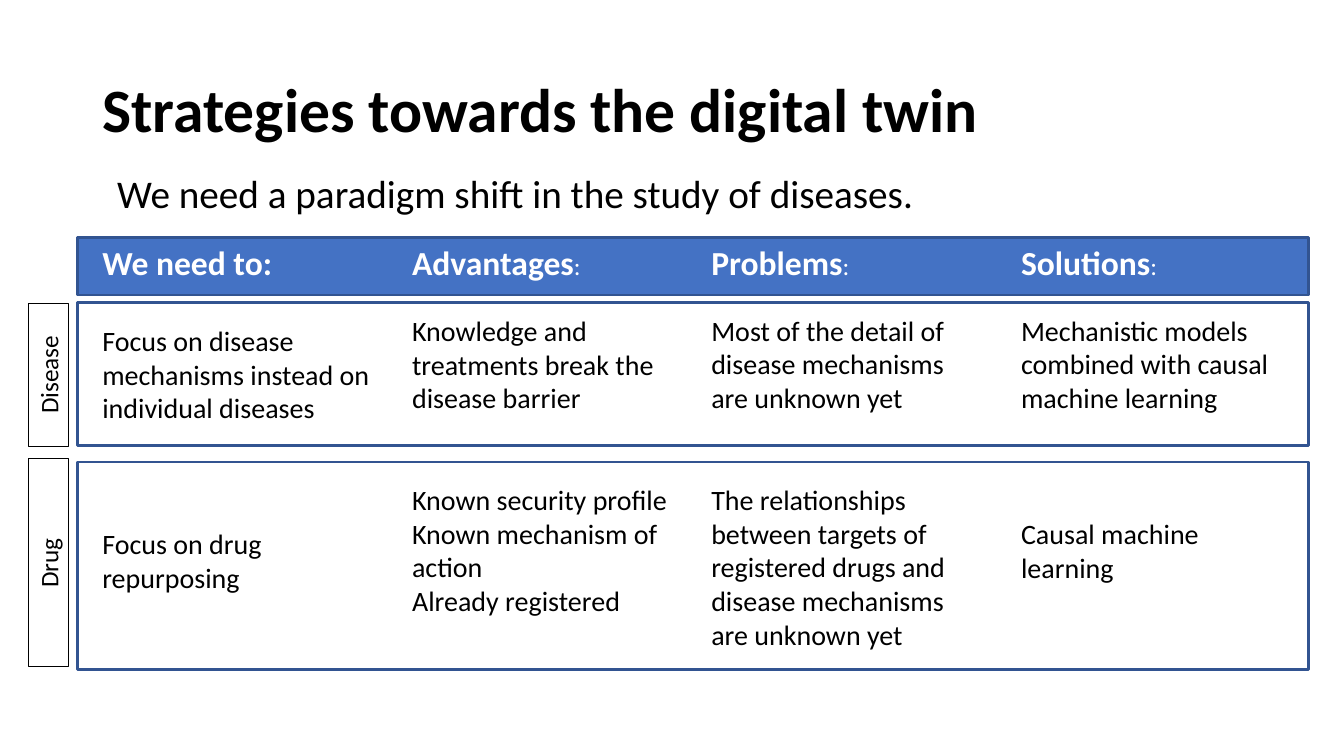
import dataclasses
import typing

import pptx
import pptx.dml.color
import pptx.enum.shapes
import pptx.enum.text
import pptx.oxml.xmlchemy
import pptx.util

RGB = pptx.dml.color.RGBColor
ALIGN = pptx.enum.text.PP_ALIGN
ANCHOR = pptx.enum.text.MSO_ANCHOR
AUTO = pptx.enum.text.MSO_AUTO_SIZE

BLUE = RGB(0x44, 0x72, 0xC4)
DARK_BLUE = RGB(0x32, 0x54, 0x91)
BLACK = RGB(0, 0, 0)
WHITE = RGB(0xFF, 0xFF, 0xFF)

FONT = "Calibri"
EMU_PER_PX = 9525
GRID_LEFT, GRID_WIDTH = 74, 1172
COLUMN_TOP = 226
TAG_CENTER, TAG_THICKNESS = 46, 38


@dataclasses.dataclass
class Row:
    tag: str
    top: int
    height: int
    tag_top: int


@dataclasses.dataclass
class Column:
    left: int
    width: int
    height: int
    heading: str
    colon: str
    colon_size: int
    disease: str
    disease_gap: float
    drug: list[str]
    drug_gap: float


ROWS = [
    Row("Disease", 288, 136, 289),
    Row("Drug", 440, 198, 437),
]

COLUMNS = [
    Column(88, 280, 400, "We need to", ":", 24,
           "Focus on disease mechanisms instead on individual diseases", 29.3,
           ["Focus on drug repurposing"], 73.2),
    Column(383, 270, 394, "Advantages", ":", 18,
           "Knowledge and treatments break the disease barrier", 22,
           ["Known security profile", "Known mechanism of action",
            "Already registered"], 48.8),
    Column(668, 280, 396, "Problems", ":", 18,
           "Most of the detail of disease mechanisms are unknown yet", 22,
           ["The relationships between targets of registered drugs and "
            "disease mechanisms are unknown yet"], 48.8),
    Column(963, 280, 362, "Solutions", ":", 18,
           "Mechanistic models combined with causal machine learning", 22,
           ["Causal machine learning"], 73.2),
]


def px(n: float) -> int:
    return pptx.util.Emu(round(n * EMU_PER_PX))


def place(s: typing.Any, left: int, top: int, width: int, height: int) -> None:
    s.left, s.top, s.width, s.height = px(left), px(top), px(width), px(height)


def add_run(p: typing.Any, text: str, *, size: float = 20,
            color: RGB = BLACK, bold: bool = False) -> None:
    r = p.add_run()
    r.text = text
    r.font.name = FONT
    r.font.size = pptx.util.Pt(size)
    r.font.bold = bold
    r.font.color.rgb = color


def add_rect(slide: typing.Any, left: int, top: int, width: int, height: int, *,
             fill: RGB | None = None, line: RGB = DARK_BLUE,
             weight: float = 2) -> typing.Any:
    s = slide.shapes.add_shape(pptx.enum.shapes.MSO_SHAPE.RECTANGLE,
                               px(left), px(top), px(width), px(height))
    s.shadow.inherit = False
    if fill is None:
        s.fill.background()
    else:
        s.fill.solid()
        s.fill.fore_color.rgb = fill
    s.line.color.rgb = line
    s.line.width = pptx.util.Pt(weight)
    return s


def add_column(slide: typing.Any, column: Column) -> None:
    s = slide.shapes.add_textbox(px(column.left), px(COLUMN_TOP),
                                 px(column.width), px(column.height))
    tf = s.text_frame
    tf.word_wrap = True
    p = tf.paragraphs[0]
    add_run(p, column.heading, size=24, color=WHITE, bold=True)
    add_run(p, column.colon, size=column.colon_size, color=WHITE,
            bold=column.colon_size == 24)
    gaps = [column.disease_gap, column.drug_gap] + [0] * (len(column.drug) - 1)
    for text, gap in zip([column.disease, *column.drug], gaps):
        p = tf.add_paragraph()
        p.space_before = pptx.util.Pt(gap)
        add_run(p, text)


def add_row(slide: typing.Any, row: Row) -> None:
    """Frame one row and put its label, turned upwards, to the left."""
    add_rect(slide, GRID_LEFT, row.top, GRID_WIDTH, row.height)
    middle = row.tag_top + row.height // 2
    tag = add_rect(slide, TAG_CENTER - row.height // 2,
                   middle - TAG_THICKNESS // 2, row.height, TAG_THICKNESS,
                   line=BLACK, weight=0.75)
    tag.rotation = 270
    tag.text_frame.vertical_anchor = ANCHOR.TOP
    p = tag.text_frame.paragraphs[0]
    p.alignment = ALIGN.CENTER
    add_run(p, row.tag, size=18)


def fill_placeholders(slide: typing.Any) -> None:
    title, body = slide.placeholders
    place(title, 88, 38, 1104, 139)
    title.text_frame.vertical_anchor = ANCHOR.MIDDLE
    title.text_frame.auto_size = AUTO.NONE
    p = title.text_frame.paragraphs[0]
    p.alignment = ALIGN.LEFT
    p.line_spacing = 0.9
    add_run(p, "Strategies towards the digital twin", size=44, bold=True)

    place(body, 102, 156, 1104, 55)
    body.text_frame.auto_size = AUTO.NONE
    p = body.text_frame.paragraphs[0]
    p.space_before = pptx.util.Pt(0)
    pPr = p._p.get_or_add_pPr()
    pPr.set("marL", "0")
    pPr.set("indent", "0")
    pPr.append(pptx.oxml.xmlchemy.OxmlElement("a:buNone"))
    add_run(p, "We need a paradigm shift in the study of diseases.", size=28)


def main() -> None:
    prs = pptx.Presentation()
    prs.slide_width, prs.slide_height = px(1280), px(720)
    slide = prs.slides.add_slide(prs.slide_layouts[1])
    fill_placeholders(slide)
    add_rect(slide, GRID_LEFT, COLUMN_TOP, GRID_WIDTH, 55, fill=BLUE)
    for column in COLUMNS:
        add_column(slide, column)
    for row in ROWS:
        add_row(slide, row)
    prs.save("out.pptx")


if __name__ == "__main__":
    main()
